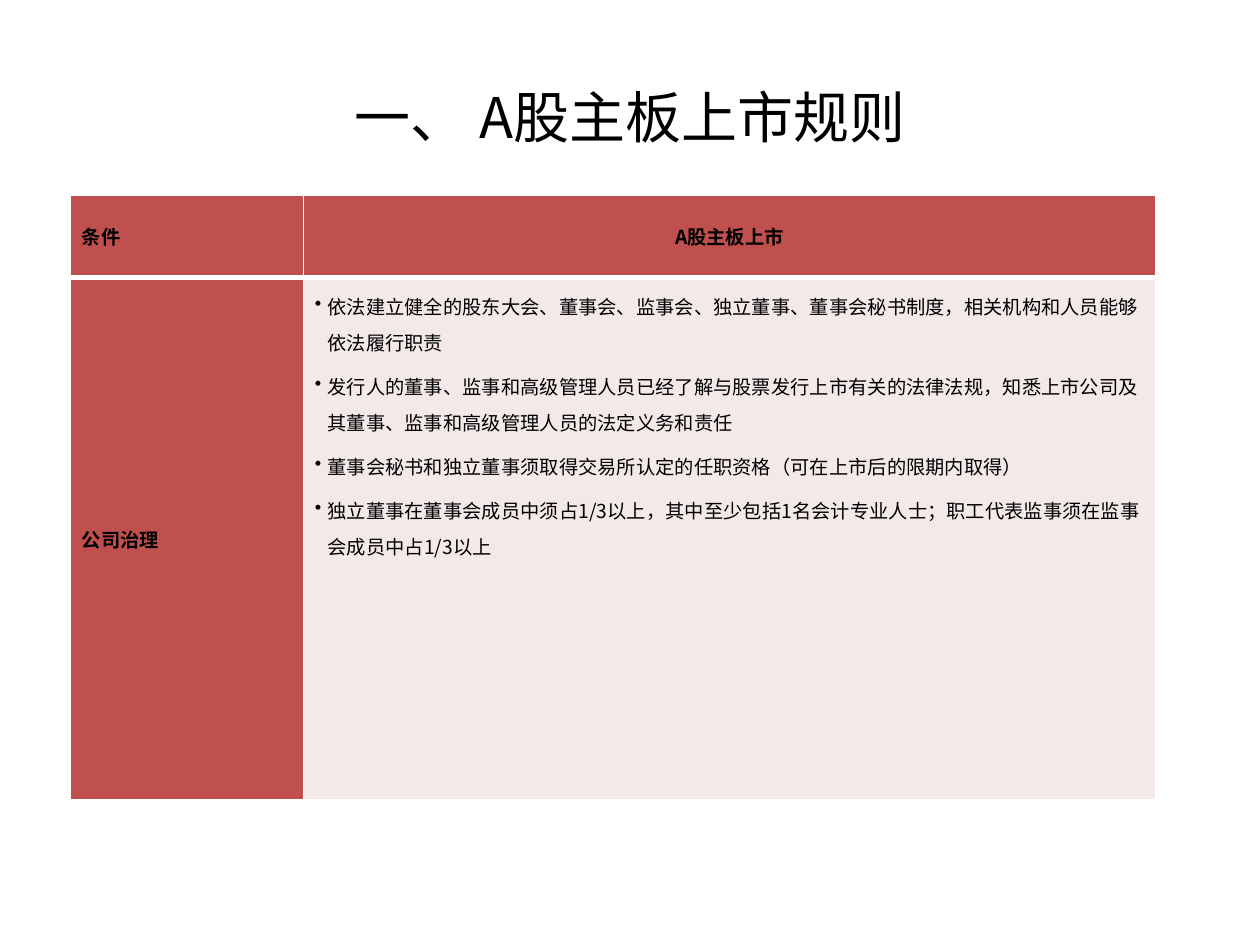
from lxml import etree
from pptx import Presentation
from pptx.dml.color import RGBColor
from pptx.enum.text import MSO_ANCHOR, PP_ALIGN
from pptx.oxml.ns import qn
from pptx.util import Inches, Pt

CENTER, LEFT = PP_ALIGN.CENTER, PP_ALIGN.LEFT
MIDDLE, TOP = MSO_ANCHOR.MIDDLE, MSO_ANCHOR.TOP

FONT = "Noto Sans CJK SC"
BLACK, WHITE, RED, PINK = "000000", "FFFFFF", "C0504D", "F4E9E9"
TEXT_SIZE = 11
COLUMNS = [1.85, 6.76]
ROWS = [0.65, 4.15]

TITLE = "一、 A股主板上市规则"
HEADERS = ["条件", "A股主板上市"]
TOPIC = "公司治理"
RULES = [
    "依法建立健全的股东大会、董事会、监事会、独立董事、董事会秘书制度，相关机构和人员能够依法履行职责",
    "发行人的董事、监事和高级管理人员已经了解与股票发行上市有关的法律法规，知悉上市公司及其董事、监事和高级管理人员的法定义务和责任",
    "董事会秘书和独立董事须取得交易所认定的任职资格（可在上市后的限期内取得）",
    "独立董事在董事会成员中须占1/3以上，其中至少包括1名会计专业人士；职工代表监事须在监事会成员中占1/3以上",
]


def color(value):
    return RGBColor.from_string(value)


def write(para, text, size, bold=False, align=LEFT):
    para.alignment = align
    span = para.add_run()
    span.text = text
    font = span.font
    font.size, font.bold, font.name = Pt(size), bold, FONT
    font.color.rgb = color(BLACK)
    # East Asian glyphs take their own typeface entry
    etree.SubElement(font._element, qn("a:ea"), typeface=FONT)


def add_bullet(para):
    props = para._p.get_or_add_pPr()
    props.set("marL", str(Inches(0.1)))
    props.set("indent", str(-Inches(0.1)))
    etree.SubElement(props, qn("a:buChar"), char="•")


def set_borders(cell, bottom):
    props = cell._tc.get_or_add_tcPr()
    widths = {"lnL": 1, "lnR": 1, "lnT": 1, "lnB": bottom}
    for index, (side, width) in enumerate(widths.items()):
        line = etree.Element(qn(f"a:{side}"), w=str(Pt(width)))
        fill = etree.SubElement(line, qn("a:solidFill"))
        etree.SubElement(fill, qn("a:srgbClr"), val=WHITE)
        props.insert(index, line)


def fill_cell(cell, texts, fill, bold=True, align=LEFT, anchor=MIDDLE,
              bullets=False, bottom=1):
    cell.fill.solid()
    cell.fill.fore_color.rgb = color(fill)
    set_borders(cell, bottom)
    cell.vertical_anchor = anchor
    cell.margin_left = cell.margin_right = Inches(0.09)
    cell.margin_top = cell.margin_bottom = Inches(0.05 if bullets else 0.04)
    frame = cell.text_frame
    for index, text in enumerate(texts):
        para = frame.add_paragraph() if index else frame.paragraphs[0]
        para.space_before = Pt(0.4 * TEXT_SIZE)
        if bullets:
            para.line_spacing = 1.3
            add_bullet(para)
        write(para, text, TEXT_SIZE, bold, align)


def add_title(page):
    box = page.shapes.add_textbox(Inches(0.5), Inches(0.3), Inches(9), Inches(1.25))
    frame = box.text_frame
    frame.word_wrap = True
    frame.vertical_anchor = MIDDLE
    write(frame.paragraphs[0], TITLE, 32, align=CENTER)


def add_rules_table(page):
    table = page.shapes.add_table(
        len(ROWS), len(COLUMNS), Inches(0.56), Inches(1.55),
        Inches(sum(COLUMNS)), Inches(sum(ROWS))).table
    for column, width in zip(table.columns, COLUMNS):
        column.width = Inches(width)
    for row, height in zip(table.rows, ROWS):
        row.height = Inches(height)

    # Header row
    for index, (text, align) in enumerate(zip(HEADERS, [LEFT, CENTER])):
        fill_cell(table.cell(0, index), [text], RED, align=align, bottom=3)

    # Topic and its rules
    fill_cell(table.cell(1, 0), [TOPIC], RED)
    fill_cell(table.cell(1, 1), RULES, PINK, bold=False, anchor=TOP, bullets=True)


def main():
    deck = Presentation()
    deck.slide_width, deck.slide_height = Inches(10), Inches(7.5)
    page = deck.slides.add_slide(deck.slide_layouts[6])
    add_rules_table(page)
    add_title(page)
    deck.save("out.pptx")


if __name__ == "__main__":
    main()
